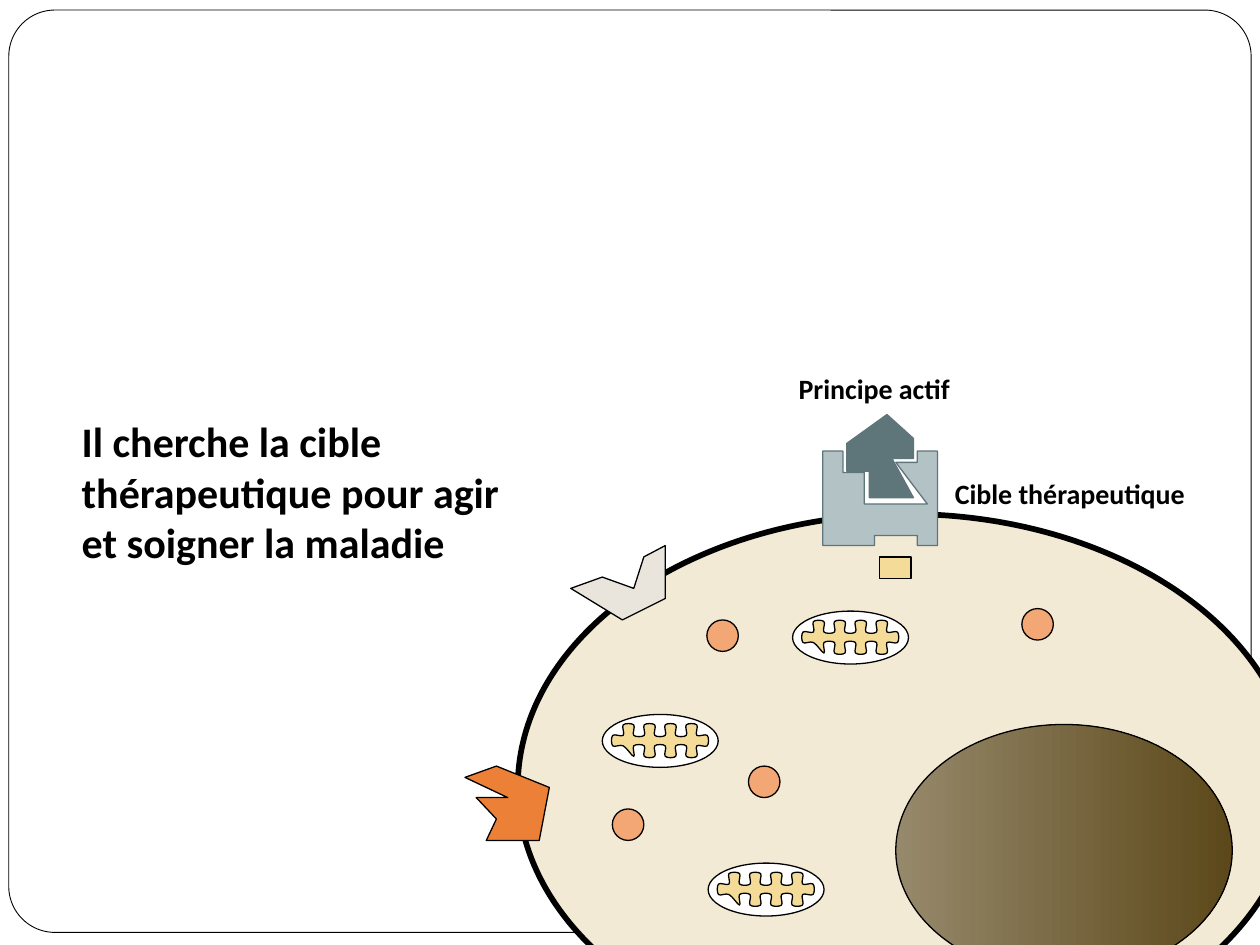
"""Builds a slide showing an active ingredient meeting its target on a cell."""
from dataclasses import dataclass

import pptx
import pptx.dml.color
import pptx.enum.shapes
import pptx.enum.text
import pptx.oxml
import pptx.oxml.ns
import pptx.util

Inches = pptx.util.Inches
Pt = pptx.util.Pt
MSO_SHAPE = pptx.enum.shapes.MSO_SHAPE
MSO_AUTO_SIZE = pptx.enum.text.MSO_AUTO_SIZE
qn = pptx.oxml.ns.qn

Point = tuple[float, float]

BLACK = "000000"
WHITE = "FFFFFF"
YELLOW = "F4DC98"
TEAL = "5E767A"
GRID = 1 / 12


@dataclass
class Preset:
    kind: MSO_SHAPE
    left: float
    top: float
    width: float
    height: float
    fill: str
    line_width: float = 0.75


@dataclass
class Outline:
    points: list[Point]
    fill: str
    line: str = BLACK


@dataclass
class Label:
    text: str
    left: float
    top: float
    width: float
    height: float
    size: int = 16
    wrap: bool = False


FRAME = Preset(MSO_SHAPE.ROUNDED_RECTANGLE, 0.07, 0.08, 9.86, 7.32, WHITE, 0.5)
CELL = Preset(MSO_SHAPE.OVAL, 4.11, 4.08, 6.17, 4.33, "F3EAD5", 3.25)
NUCLEUS = Preset(MSO_SHAPE.OVAL, 7.11, 5.75, 2.67, 2, "96896B")
SIGNAL = Preset(MSO_SHAPE.RECTANGLE, 6.98, 4.42, 0.25, 0.17, YELLOW)
MITOCHONDRIA = [(4.78, 5.67), (5.62, 6.85), (6.29, 4.85)]
VESICLES = [(5.61, 4.92), (4.86, 6.42), (5.94, 6.08), (8.11, 4.83)]

GREY_RECEPTOR = Outline(
    [(4.53, 4.67), (4.94, 4.92), (5.28, 4.75), (5.28, 4.33), (5.11, 4.42),
     (5.03, 4.67), (4.78, 4.58)], "E9E5DC")
ORANGE_RECEPTOR = Outline(
    [(3.94, 6.08), (4.36, 6.25), (4.28, 6.67), (3.86, 6.67), (3.94, 6.5),
     (3.78, 6.33), (4.03, 6.33), (3.69, 6.17)], "EC8036")
TARGET = Outline(
    [(7.28, 3.58), (7.28, 3.67), (7.11, 3.67), (7.36, 4), (6.86, 4),
     (6.86, 3.75), (6.69, 3.75), (6.69, 3.58), (6.53, 3.58), (6.53, 4.33),
     (6.94, 4.33), (6.94, 4.25), (7.28, 4.25), (7.28, 4.33), (7.44, 4.33),
     (7.44, 3.58)], "B3C2C5", TEAL)
INGREDIENT = Outline(
    [(7.04, 3.29), (6.72, 3.52), (6.72, 3.74), (6.9, 3.74), (6.9, 3.95),
     (7.25, 3.95), (7.08, 3.64), (7.25, 3.64), (7.25, 3.48)], TEAL, TEAL)

TARGET_LABEL = Label("Cible thérapeutique", 7.48, 3.73, 2.06, 0.37)
INGREDIENT_LABEL = Label("Principe actif", 6.24, 2.9, 1.43, 0.37)
MESSAGE = Label("Il cherche la cible thérapeutique pour agir et soigner la maladie",
                0.55, 3.25, 3.58, 1.31, 24, True)


def rgb(value: str) -> pptx.dml.color.RGBColor:
    return pptx.dml.color.RGBColor.from_string(value)


def paint(sp, fill: str, line: str, width: float) -> None:
    sp.shadow.inherit = False
    sp.fill.solid()
    sp.fill.fore_color.rgb = rgb(fill)
    sp.line.color.rgb = rgb(line)
    sp.line.width = Pt(width)


def add_preset(s, item: Preset):
    sp = s.shapes.add_shape(item.kind, Inches(item.left), Inches(item.top),
                            Inches(item.width), Inches(item.height))
    paint(sp, item.fill, BLACK, item.line_width)
    return sp


def add_outline(s, item: Outline):
    start, *rest = [(Inches(x), Inches(y)) for x, y in item.points]
    builder = s.shapes.build_freeform(*start)
    builder.add_line_segments(rest + [start], close=True)
    sp = builder.convert_to_shape()
    paint(sp, item.fill, item.line, 0.75)
    return sp


def add_label(s, item: Label) -> None:
    sp = s.shapes.add_textbox(Inches(item.left), Inches(item.top),
                              Inches(item.width), Inches(item.height))
    tf = sp.text_frame
    tf.word_wrap = item.wrap
    tf.auto_size = MSO_AUTO_SIZE.SHAPE_TO_FIT_TEXT
    r = tf.paragraphs[0].add_run()
    r.text = item.text
    r.font.name = "Calibri"
    r.font.size = Pt(item.size)
    r.font.bold = True
    r.font.color.rgb = rgb(BLACK)


def with_handles(nodes: list[Point]) -> list[Point]:
    points = []
    for i, (x, y) in enumerate(nodes):
        (ax, ay), (cx, cy), (dx, dy) = [nodes[(i + k) % len(nodes)]
                                        for k in (-1, 1, 2)]
        points += [(x, y), (x + (cx - ax) / 6, y + (cy - ay) / 6),
                   (cx - (dx - x) / 6, cy - (dy - y) / 6)]
    return points


def bend_lines(sp) -> None:
    lines = list(sp._element.iter(qn("a:lnTo")))
    for first, second, end in zip(lines[::3], lines[1::3], lines[2::3]):
        curve = pptx.oxml.parse_xml(
            f'<a:cubicBezTo {pptx.oxml.ns.nsdecls("a")}/>')
        first.addprevious(curve)
        for line in (first, second, end):
            curve.append(line[0])
            line.getparent().remove(line)


def crista_nodes() -> list[Point]:
    nodes = [(0, 2), (0, 1)]
    for x in range(1, 9, 2):
        nodes += [(x, 1), (x, 0), (x + 1, 0), (x + 1, 1)]
    nodes += [(9, 1), (9, 2)]
    for x in range(8, 2, -2):
        nodes += [(x, 2), (x, 3), (x - 1, 3), (x - 1, 2)]
    return nodes + [(2, 2), (2, 3), (1, 2)]


def add_mitochondrion(s, left: float, top: float) -> None:
    add_preset(s, Preset(MSO_SHAPE.OVAL, left, top, 0.92, 0.42, WHITE))
    points = [(left + (x + 1) * GRID, top + (y + 1) * GRID)
              for x, y in with_handles(crista_nodes())]
    bend_lines(add_outline(s, Outline(points, YELLOW)))


def add_nucleus(s) -> None:
    sp = add_preset(s, NUCLEUS)
    sp.fill.gradient()
    sp.fill.gradient_angle = 0
    for stop, position, color in zip(sp.fill.gradient_stops, (0, 1),
                                     (NUCLEUS.fill, "5C481A")):
        stop.position = position
        stop.color.rgb = rgb(color)


def main() -> None:
    prs = pptx.Presentation()
    prs.slide_width, prs.slide_height = Inches(10), Inches(7.5)
    s = prs.slides.add_slide(prs.slide_layouts[6])
    add_preset(s, FRAME).adjustments[0] = 0.05
    add_preset(s, CELL)
    add_nucleus(s)
    for left, top in MITOCHONDRIA:
        add_mitochondrion(s, left, top)
    for left, top in VESICLES:
        add_preset(s, Preset(MSO_SHAPE.OVAL, left, top, 0.25, 0.25, "F2A774"))
    add_outline(s, GREY_RECEPTOR)
    add_outline(s, ORANGE_RECEPTOR)
    add_label(s, TARGET_LABEL)
    add_outline(s, TARGET)
    add_preset(s, SIGNAL)
    add_label(s, INGREDIENT_LABEL)
    add_outline(s, INGREDIENT)
    add_label(s, MESSAGE)
    prs.save("out.pptx")


if __name__ == "__main__":
    main()
